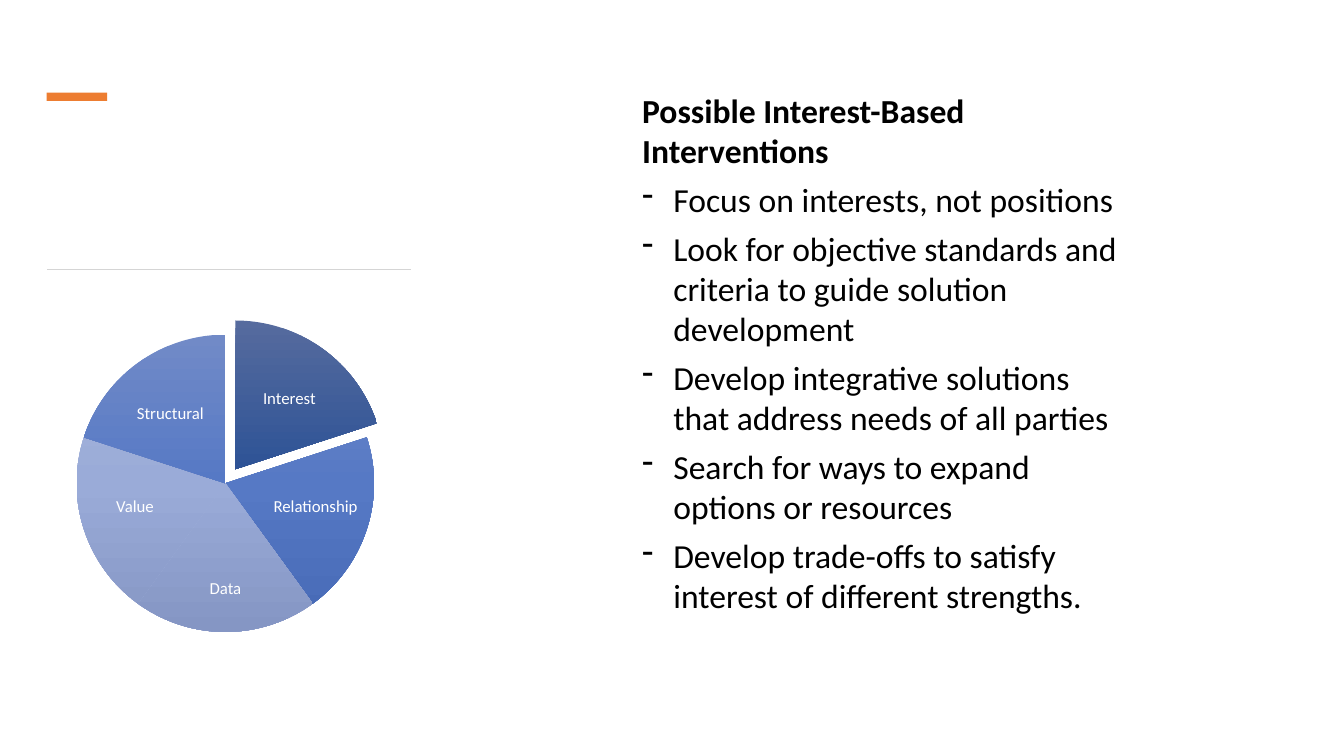
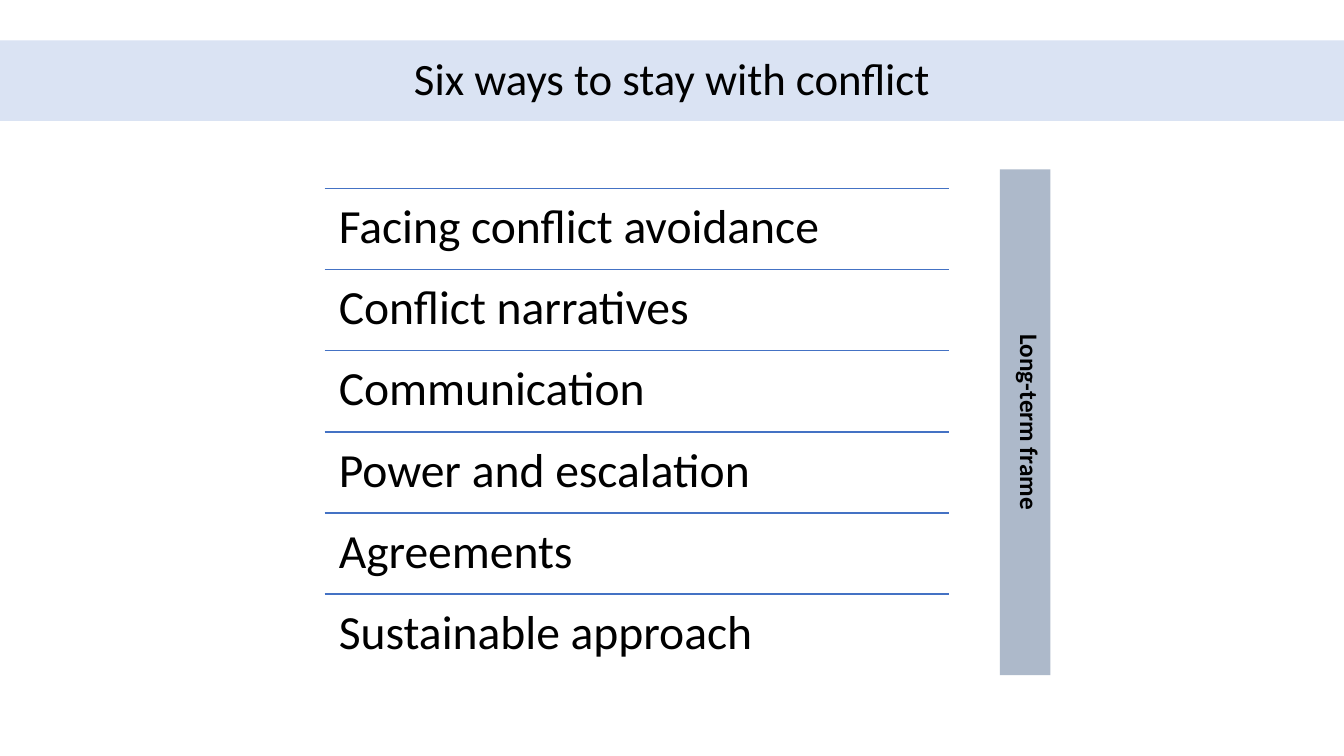
"""Build two slides on conflict: interest-based interventions and six ways to stay with it."""
import copy

import pptx
import pptx.dml.color
import pptx.enum.shapes
import pptx.enum.text
import pptx.oxml.ns
import pptx.util

THEME = {
    "font": "Calibri",
    "ink": "000000",
    "paper": "FFFFFF",
    "accent": "ED7D31",
    "rule": "D5D5D5",
    "row_line": "4472C4",
    "band": "DAE3F3",
    "frame": "ADB9CA",
    "dark_slice": ("566B9E", "2E5396", "244989"),
    "mid_slice": ("718AC7", "5679C5", "4669B5"),
    "light_slice": ("A9B6DB", "9AABD8", "8596C4"),
    "label_size": 12,
    "frame_size": 18,
    "body_size": 24,
    "title_size": 32,
    "row_size": 34,
}
SHAPE = pptx.enum.shapes.MSO_SHAPE
CENTER = pptx.enum.text.PP_ALIGN.CENTER
MIDDLE = pptx.enum.text.MSO_ANCHOR.MIDDLE
rgb = pptx.dml.color.RGBColor.from_string
qn = pptx.oxml.ns.qn

presentation = pptx.Presentation()
presentation.slide_width = pptx.util.Inches(13.33)
presentation.slide_height = pptx.util.Inches(7.5)
column = presentation.slide_width / 100
row = presentation.slide_height / 100
blank = presentation.slide_layouts[6]


def add_item(slide, kind, left, top, width, height, color=None):
    """Add a line, text box or preset shape, measured in percent of the slide."""
    box = [int(left * column), int(top * row), int(width * column), int(height * row)]
    if kind == "line":
        straight = pptx.enum.shapes.MSO_CONNECTOR.STRAIGHT
        line = slide.shapes.add_connector(straight, box[0], box[1], box[0] + box[2], box[1] + box[3])
        line.line.color.rgb = rgb(color)
        line.line.width = pptx.util.Pt(1)
        line._element.spPr.append(pptx.oxml.parse_xml(f'<a:effectLst {pptx.oxml.ns.nsdecls("a")}/>'))
        return line
    if kind == "text":
        return slide.shapes.add_textbox(*box)
    shape = slide.shapes.add_shape(kind, *box)
    shape.shadow.inherit = False
    shape.line.fill.background()
    if isinstance(color, str):
        shape.fill.solid()
        shape.fill.fore_color.rgb = rgb(color)
    else:
        shape.fill.gradient()
        shape.fill.gradient_angle = 270
        stop_list = shape._element.spPr.find(".//" + qn("a:gsLst"))
        stop_list.append(copy.deepcopy(stop_list[0]))
        for index, stop in enumerate(shape.fill.gradient_stops):
            stop.color.rgb = rgb(color[index])
            stop.position = index / 2
    return shape


def write(shape, lines, size, color="ink", bold=False, frame=None, layout=None):
    """Fill a shape with one paragraph per line and apply the given format values."""
    text_frame = shape.text_frame
    text_frame.text = "\n".join(lines)
    for name, value in {"word_wrap": True, **(frame or {})}.items():
        setattr(text_frame, name, value)
    for paragraph in text_frame.paragraphs:
        for name, value in (layout or {}).items():
            setattr(paragraph, name, value)
        font = paragraph.runs[0].font
        values = {"name": THEME["font"], "size": pptx.util.Pt(THEME[size]), "bold": bold}
        for name, value in values.items():
            setattr(font, name, value)
        font.color.rgb = rgb(THEME[color])
    return text_frame


slide = presentation.slides.add_slide(blank)
add_item(slide, SHAPE.RECTANGLE, 3.48, 12.27, 4.5, 1.07, THEME["accent"])
add_item(slide, "line", 3.5, 35.67, 27.1, 0, THEME["rule"])

interventions = [
    "Possible Interest-Based Interventions",
    "Focus on interests, not positions",
    "Look for objective standards and criteria to guide solution development",
    "Develop integrative solutions that address needs of all parties",
    "Search for ways to expand options or resources",
    "Develop trade-offs to satisfy interest of different strengths.",
]
body = write(add_item(slide, "text", 47.04, 11.2, 37.8, 76.8), interventions, "body_size",
             layout={"space_after": pptx.util.Pt(6)})
body.paragraphs[0].runs[0].font.bold = True
hang = pptx.util.Inches(0.31)
for paragraph in body.paragraphs[1:]:
    properties = paragraph._p.get_or_add_pPr()
    properties.set("marL", str(hang))
    properties.set("indent", str(-hang))
    bullet = pptx.oxml.parse_xml(f'<a:buChar {pptx.oxml.ns.nsdecls("a")} char="-"/>')
    properties.append(bullet)

slices = [
    ("Interest", "dark_slice", 21.53, 52.8),
    ("Relationship", "mid_slice", 23.48, 67.07),
    ("Data", "light_slice", 16.77, 77.93),
    ("Value", "light_slice", 10.05, 67.07),
    ("Structural", "mid_slice", 12.68, 54.8),
]
turn = 360 / len(slices)
tight = dict.fromkeys(["margin_left", "margin_top", "margin_right", "margin_bottom"],
                      pptx.util.Inches(0.02))
for index, (label, shades, center_x, center_y) in enumerate(slices):
    pulled = index == 0
    pie = add_item(slide, SHAPE.PIE, 5.7 + 0.75 * pulled, 44.27 - 1.87 * pulled,
                   22.13, 39.33, THEME[shades])
    for edge in range(2):
        pie.adjustments[edge] = (270 + turn * (index + edge)) % 360 * 0.6
    write(add_item(slide, "text", center_x - 4, center_y - 4.5, 8, 9), [label], "label_size", "paper",
          frame={"vertical_anchor": MIDDLE, **tight},
          layout={"alignment": CENTER, "line_spacing": 0.9})

slide = presentation.slides.add_slide(blank)
write(add_item(slide, SHAPE.RECTANGLE, 0, 5.33, 100, 10.67, THEME["band"]),
      ["Six ways to stay with conflict"], "title_size",
      frame={"vertical_anchor": MIDDLE}, layout={"alignment": CENTER, "line_spacing": 0.9})

ways = ["Facing conflict avoidance", "Conflict narratives", "Communication",
        "Power and escalation", "Agreements", "Sustainable approach"]
pitch = 10.73
roomy = dict.fromkeys(tight, pptx.util.Inches(0.14))
for index, way in enumerate(ways):
    top = 24.93 + index * pitch
    add_item(slide, "line", 24.16, top, 46.44, 0, THEME["row_line"])
    write(add_item(slide, "text", 24.16, top, 46.44, pitch), [way], "row_size",
          frame=roomy, layout={"line_spacing": 0.9})

long_term = add_item(slide, SHAPE.RECTANGLE, 74.4, 22.4, 3.75, 66.93, THEME["frame"])
write(long_term, ["Long-term frame"], "frame_size", bold=True,
      frame={"vertical_anchor": pptx.enum.text.MSO_ANCHOR.TOP}, layout={"alignment": CENTER})
long_term.text_frame._txBody.bodyPr.set("vert", "vert")

presentation.save("out.pptx")
